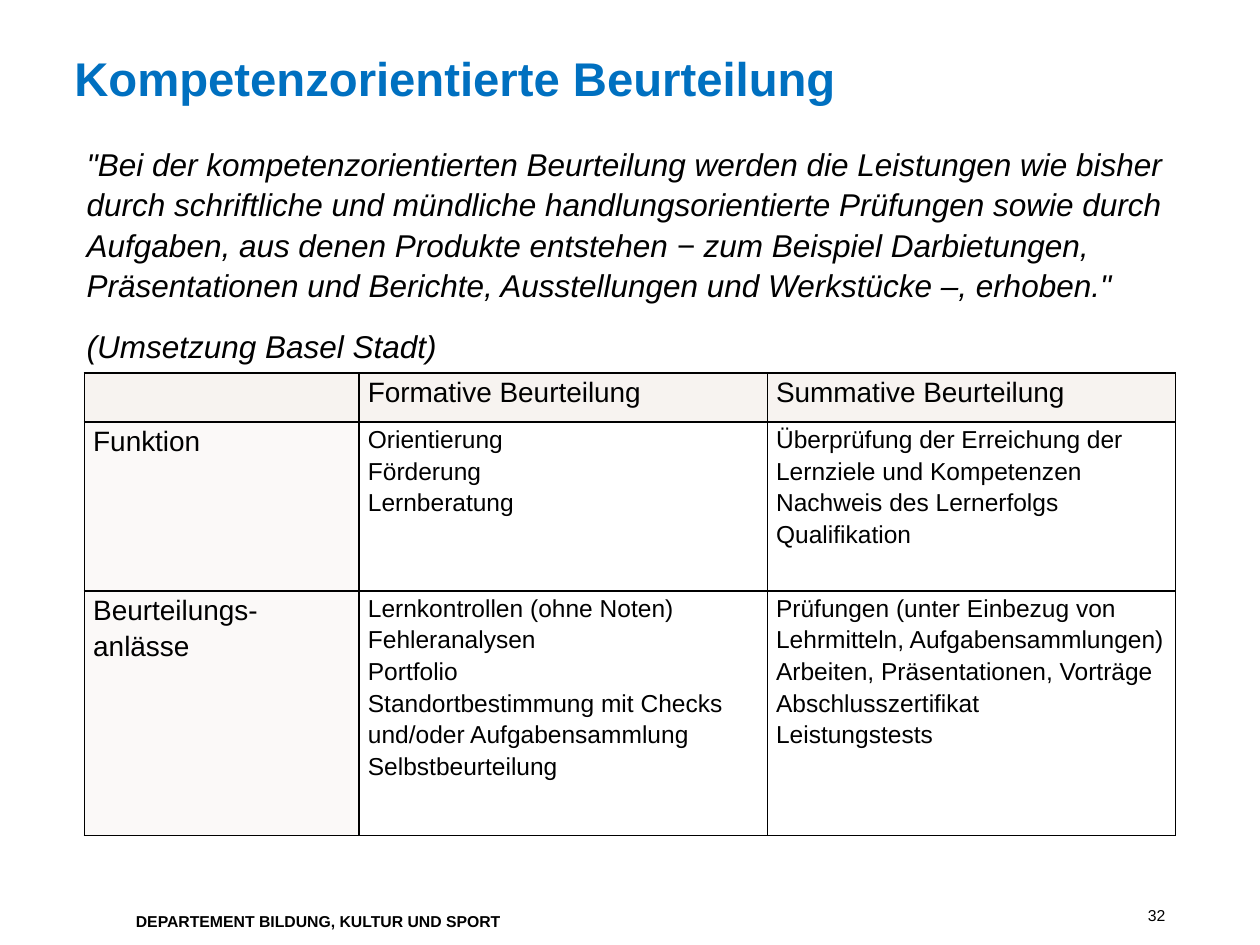
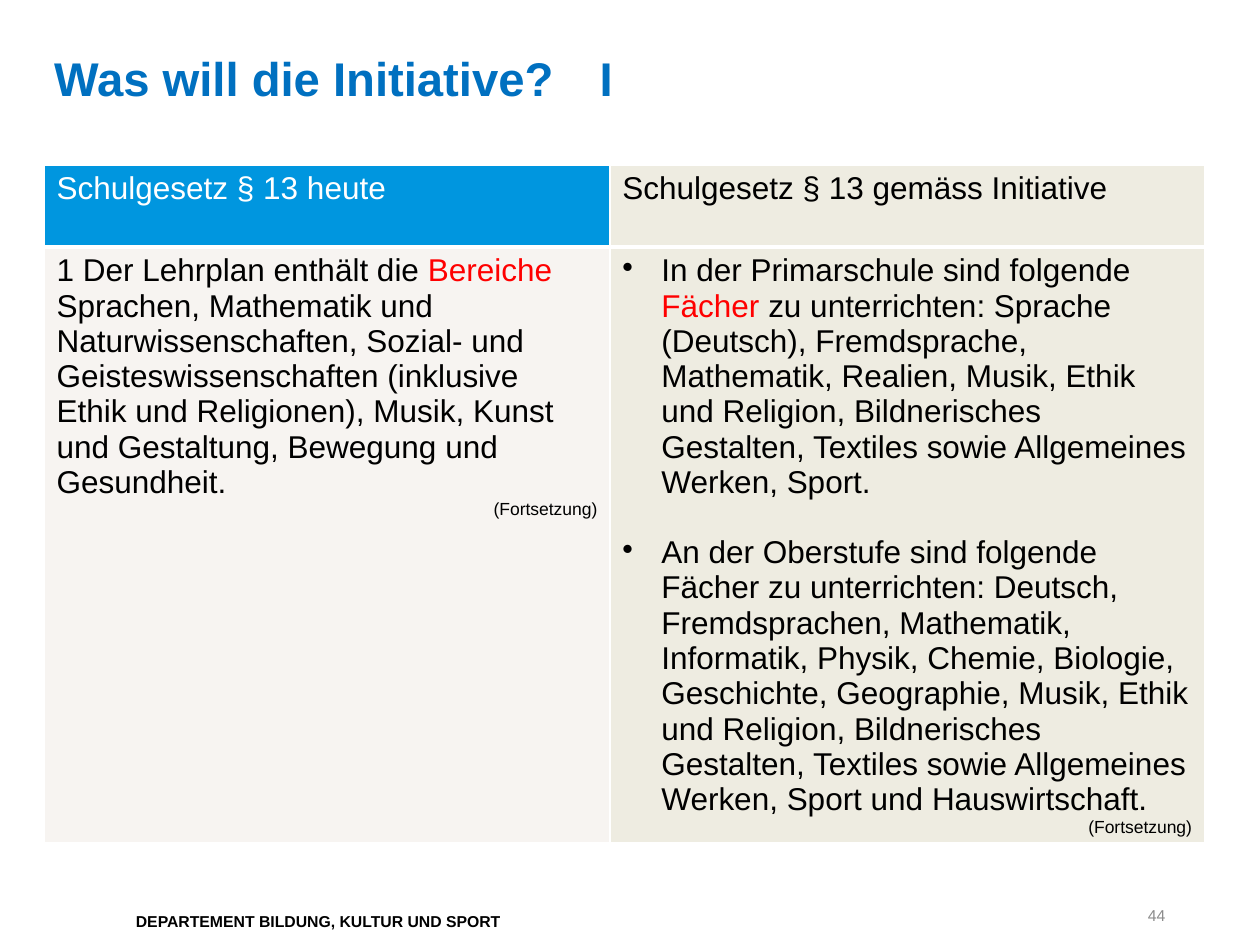
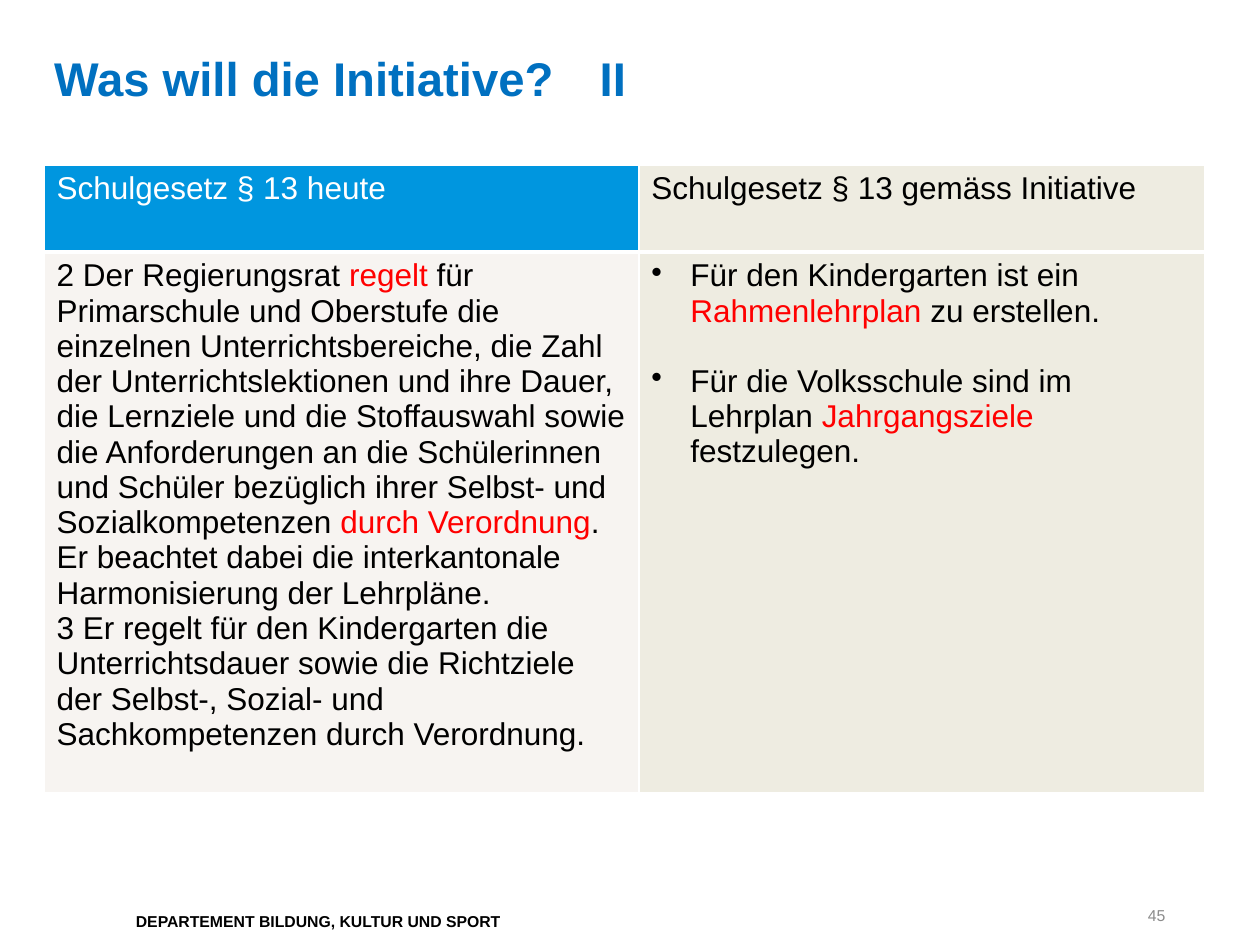
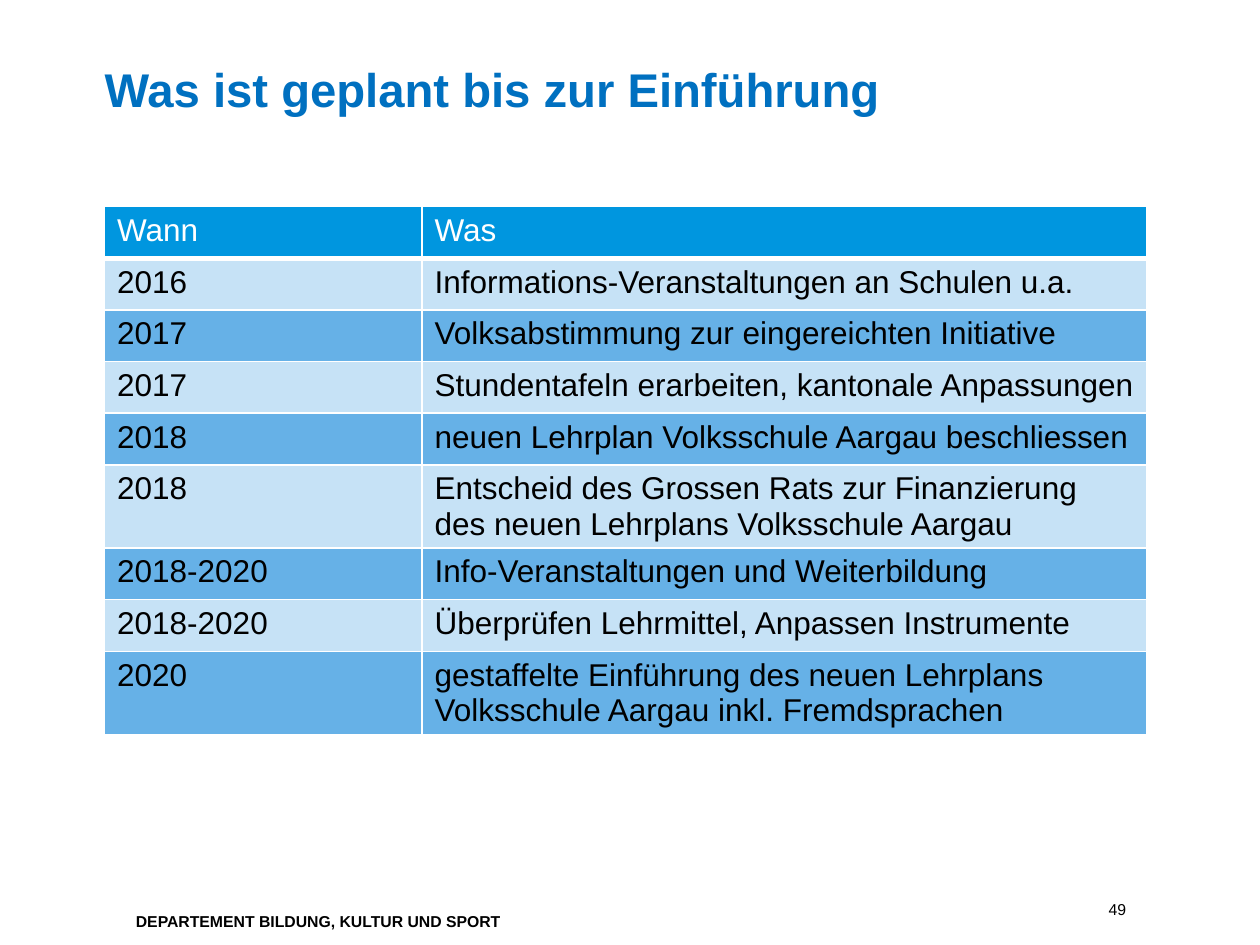
from lxml.etree import SubElement as Sub
from pptx import Presentation
from pptx.dml.color import RGBColor as RGB
from pptx.enum.text import MSO_ANCHOR as Anchor, MSO_AUTO_SIZE as Fit, PP_ALIGN as Align
from pptx.oxml.ns import qn
from pptx.util import Inches as In, Pt

# Shared look
COL = {"title": "0070C0", "head": "0096DF", "ink": "000000", "white": "FFFFFF",
       "red": "FF0000", "grey": "8C8C8C", "warm": "F7F3F0", "pale": "FBF9F8",
       "left": "F7F4F1", "right": "EEECE1", "light": "C6E2F6", "mid": "66B1E7"}
FONT = "Arial"
FOOT = "DEPARTEMENT BILDUNG, KULTUR UND SPORT"
NOTE = "(Fortsetzung)"
BUL = "• "
TAB = 4.33      # tab stop in titles
HANG = 0.31     # bullet indent

# Content: a list in a cell holds paragraphs, *...* marks red words
QUOTE = [
    "\"Bei der kompetenzorientierten Beurteilung werden die Leistungen wie bisher durch "
    "schriftliche und mündliche handlungsorientierte Prüfungen sowie durch Aufgaben, aus "
    "denen Produkte entstehen − zum Beispiel Darbietungen, Präsentationen und Berichte, "
    "Ausstellungen und Werkstücke –, erhoben.\"",
    "(Umsetzung Basel Stadt)",
]
FORMS = [
    [[], ["Formative Beurteilung"], ["Summative Beurteilung"]],
    [["Funktion"],
     ["Orientierung", "Förderung", "Lernberatung"],
     ["Überprüfung der Erreichung der Lernziele und Kompetenzen",
      "Nachweis des Lernerfolgs", "Qualifikation"]],
    [["Beurteilungs-anlässe"],
     ["Lernkontrollen (ohne Noten)", "Fehleranalysen", "Portfolio",
      "Standortbestimmung mit Checks und/oder Aufgabensammlung", "Selbstbeurteilung"],
     ["Prüfungen (unter Einbezug von Lehrmitteln, Aufgabensammlungen)",
      "Arbeiten, Präsentationen, Vorträge", "Abschlusszertifikat", "Leistungstests"]],
]
LAW = [["Schulgesetz § 13 heute"], ["Schulgesetz § 13 gemäss Initiative"]]
AREAS = [LAW, [
    ["1 Der Lehrplan enthält die *Bereiche* Sprachen, Mathematik und Naturwissenschaften, "
     "Sozial- und Geisteswissenschaften (inklusive Ethik und Religionen), Musik, Kunst und "
     "Gestaltung, Bewegung und Gesundheit.", NOTE],
    [BUL + "In der Primarschule sind folgende *Fächer *zu unterrichten: Sprache (Deutsch), "
     "Fremdsprache, Mathematik, Realien, Musik, Ethik und Religion, Bildnerisches Gestalten, "
     "Textiles sowie Allgemeines Werken, Sport.",
     BUL + "An der Oberstufe sind folgende Fächer zu unterrichten: Deutsch, Fremdsprachen, "
     "Mathematik, Informatik, Physik, Chemie, Biologie, Geschichte, Geographie, Musik, Ethik "
     "und Religion, Bildnerisches Gestalten, Textiles sowie Allgemeines Werken, Sport und "
     "Hauswirtschaft.", NOTE],
]]
RULES = [LAW, [
    ["2 Der Regierungsrat *regelt *für Primarschule und Oberstufe die einzelnen "
     "Unterrichtsbereiche, die Zahl der Unterrichtslektionen und ihre Dauer, die Lernziele "
     "und die Stoffauswahl sowie die Anforderungen an die Schülerinnen und Schüler bezüglich "
     "ihrer Selbst- und Sozialkompetenzen *durch Verordnung*. Er beachtet dabei die "
     "interkantonale Harmonisierung der Lehrpläne.",
     "3 Er regelt für den Kindergarten die Unterrichtsdauer sowie die Richtziele der "
     "Selbst-, Sozial- und Sachkompetenzen durch Verordnung."],
    [BUL + "Für den Kindergarten ist ein *Rahmenlehrplan* zu erstellen.",
     BUL + "Für die Volksschule sind im Lehrplan *Jahrgangsziele* festzulegen."],
]]
PLAN = [
    ("Wann", "Was"),
    ("2016", "Informations-Veranstaltungen an Schulen u.a."),
    ("2017", "Volksabstimmung zur eingereichten Initiative"),
    ("2017", "Stundentafeln erarbeiten, kantonale Anpassungen"),
    ("2018", "neuen Lehrplan Volksschule Aargau beschliessen"),
    ("2018", "Entscheid des Grossen Rats zur Finanzierung des neuen Lehrplans Volksschule Aargau"),
    ("2018-2020", "Info-Veranstaltungen und Weiterbildung"),
    ("2018-2020", "Überprüfen Lehrmittel, Anpassen Instrumente"),
    ("2020", "gestaffelte Einführung des neuen Lehrplans Volksschule Aargau inkl. Fremdsprachen"),
]


def setall(obj, vals):
    for key, val in vals.items():
        setattr(obj, key, val)


def write(par, text, size, col="ink", **more):
    """Fill a paragraph; every second part between stars is red."""
    for i, part in enumerate(text.split("*")):
        if part:
            run = par.add_run()
            run.text = part
            setall(run.font, {"name": FONT, "size": Pt(size), "bold": False, **more})
            run.font.color.rgb = RGB.from_string(COL["red" if i % 2 else col])


def pars(frame, texts):
    """Yield one paragraph of the frame for each text."""
    for i, text in enumerate(texts):
        yield (frame.add_paragraph() if i else frame.paragraphs[0]), text


def frame_of(shape, inset):
    frame = shape.text_frame
    sides = dict.fromkeys(("margin_left", "margin_top", "margin_right", "margin_bottom"), 0)
    setall(frame, {"word_wrap": True, "auto_size": Fit.NONE,
                   "vertical_anchor": Anchor.TOP, **({} if inset else sides)})
    return frame


def box(slide, at, inset=True):
    return frame_of(slide.shapes.add_textbox(*map(In, at)), inset)


def page(deck, title, left, top, num, grey=False, spot=(8.86, 7.19, 0.39, 0.16), inset=False):
    """Add a slide with title, footer and page number."""
    slide = deck.slides.add_slide(deck.slide_layouts[5])
    head = slide.shapes.title
    setall(head, dict(zip(("left", "top", "width", "height"),
                          map(In, (left, top, 8.27, 0.67)))))
    par = frame_of(head, False).paragraphs[0]
    par.alignment = Align.LEFT
    tabs = Sub(par._p.get_or_add_pPr(), qn("a:tabLst"))
    Sub(tabs, qn("a:tab"), pos=str(In(TAB)), algn="l")
    write(par, title, 27, "title", bold=True)
    write(box(slide, (0.98, 7.19, 6.38, 0.25)).paragraphs[0], FOOT, 9, bold=True)
    par = box(slide, spot, inset).paragraphs[0]
    par.alignment = Align.LEFT if inset else Align.RIGHT
    write(par, num, 9, "grey" if grey else "ink")
    return slide


def edge(cell, col, low):
    """Draw the four borders, the bottom one with width low, before the fill."""
    props = cell._tc.get_or_add_tcPr()
    for i, side in enumerate("LRTB"):
        line = props.makeelement(qn("a:ln" + side), {"w": str(Pt(low if side == "B" else 1))})
        Sub(Sub(line, qn("a:solidFill")), qn("a:srgbClr"), val=COL[col])
        props.insert(i, line)


def grid(slide, left, top, cols, rows, data, look, rim="white", tight=False):
    """Add a table; look(row, col) gives fill, text colour and size of a cell."""
    table = slide.shapes.add_table(len(rows), len(cols), In(left), In(top),
                                   In(sum(cols)), In(sum(rows))).table
    setall(table, {"first_row": False, "horz_banding": False})
    for col, width in zip(table.columns, cols):
        col.width = In(width)
    for r, high in enumerate(rows):
        table.rows[r].height = In(high)
        for c, texts in enumerate(data[r]):
            cell = table.cell(r, c)
            fill, ink, size = look(r, c)
            if fill:
                cell.fill.solid()
                cell.fill.fore_color.rgb = RGB.from_string(COL[fill])
            else:
                cell.fill.background()
            edge(cell, rim, 3 if r == 0 and not tight else 1)
            if tight:
                setall(cell, {"margin_left": In(0.07), "margin_right": In(0.07),
                              "margin_top": 0, "margin_bottom": 0})
            for par, text in pars(cell.text_frame, texts):
                if tight:
                    par.line_spacing = 1.15
                if text == NOTE:
                    par.alignment = Align.RIGHT
                if text.startswith(BUL):
                    if text != [t for t in texts if t != NOTE][-1]:
                        par.space_after = Pt(20)
                    props = par._p.get_or_add_pPr()
                    props.set("marL", str(In(HANG)))
                    props.set("indent", str(-In(HANG)))
                    Sub(props, qn("a:buChar"), char=BUL.strip())
                write(par, text.removeprefix(BUL), 10 if text == NOTE else size, ink)


# Cell looks
def form_look(r, c):
    return ("warm" if r == 0 else None if c else "pale", "ink", 14 if r and c else 16)


def law_look(r, c):
    if c:
        return "right", "ink", 18
    return ("left", "ink", 18) if r else ("head", "white", 18)


def plan_look(r, c):
    return ("light" if r % 2 else "mid", "ink", 18) if r else ("head", "white", 18)


def main():
    deck = Presentation()
    setall(deck, {"slide_width": In(10), "slide_height": In(7.5)})

    # Assessment: quote and table
    slide = page(deck, "Kompetenzorientierte Beurteilung", 0.59, 0.39, "32")
    for par, text in pars(box(slide, (0.59, 1.08, 8.74, 1.77)), QUOTE):
        last = text == QUOTE[-1]
        par.line_spacing = 1.5 if last else 1.07
        if last:
            par.space_before = Pt(2.4)
        write(par, text, 18, italic=True)
    grid(slide, 0.67, 2.96, (2.18, 3.24, 3.24), (0.39, 1.34, 1.94), FORMS,
         form_look, "ink", True)

    # Initiative: two law tables
    for part, num, cols, rows, data in (
            ("I", "44", (4.49, 4.72), (0.65, 4.73), AREAS),
            ("II", "45", (4.72, 4.49), (0.69, 4.29), RULES)):
        slide = page(deck, "Was will die Initiative?\t" + part, 0.43, 0.39, num, True)
        grid(slide, 0.35, 1.31, cols, rows, data, law_look)

    # Plan: years and steps, long steps take two lines
    slide = page(deck, "Was ist geplant bis zur Einführung", 0.83, 0.48, "49",
                 spot=(8.7, 7.09, 0.71, 0.25), inset=True)
    rows = [0.66 if len(what) > 60 else 0.41 for _, what in PLAN]
    data = [[[cell] for cell in row] for row in PLAN]
    grid(slide, 0.83, 1.64, (2.52, 5.75), rows, data, plan_look)

    deck.save("out.pptx")


if __name__ == "__main__":
    main()
